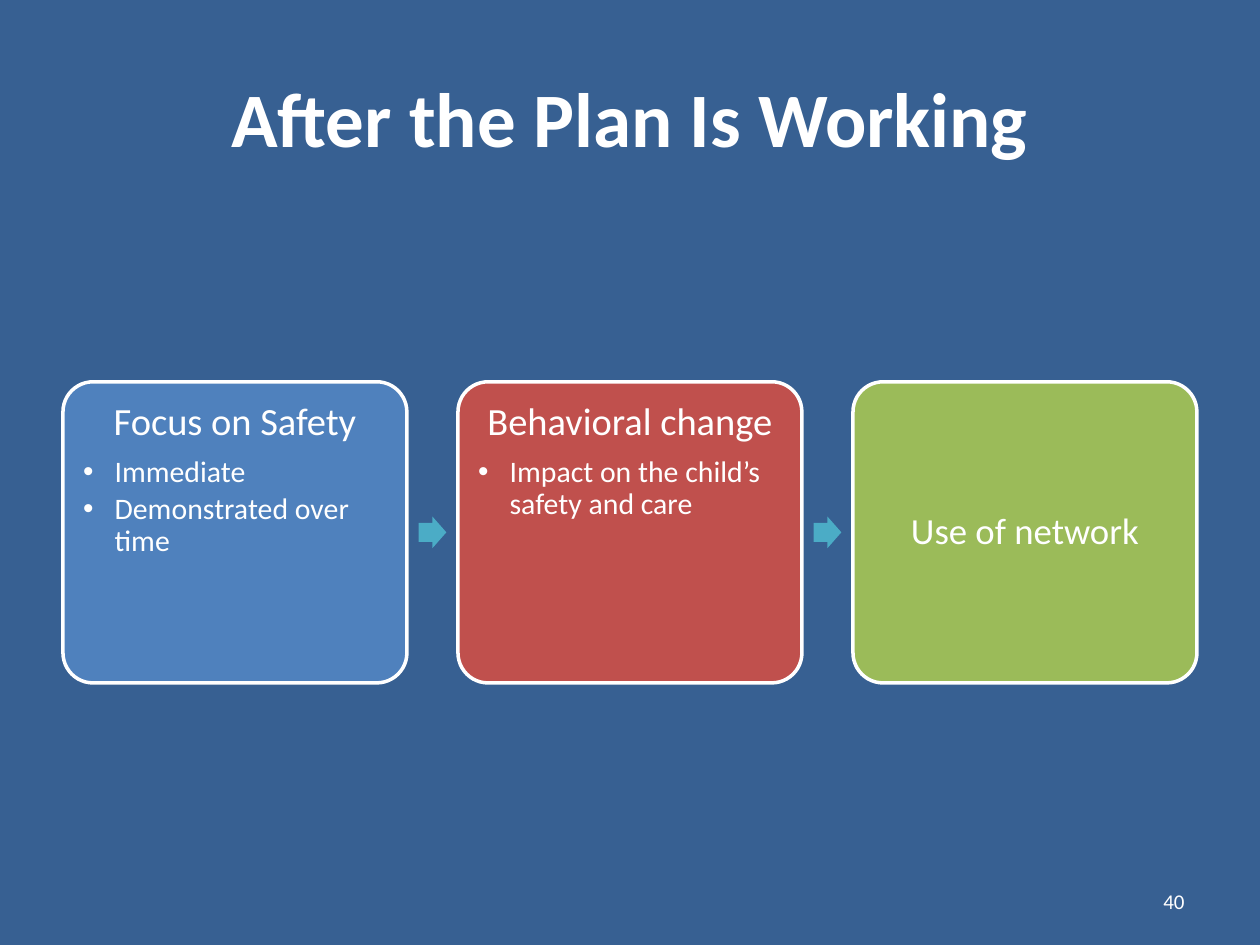
from lxml import etree
from pptx import Presentation, util as u
from pptx.dml.color import RGBColor
from pptx.enum import shapes, text
from pptx.oxml.ns import qn

NAVY = RGBColor(0x37, 0x60, 0x92)
WHITE = RGBColor(0xFF, 0xFF, 0xFF)
BLUE = RGBColor(0x4F, 0x81, 0xBD)
RED = RGBColor(0xC0, 0x50, 0x4D)
GREEN = RGBColor(0x9B, 0xBB, 0x59)
TEAL = RGBColor(0x4B, 0xAC, 0xC6)

WIDTH, HEIGHT = 10, 7.5
MARGIN = 0.5
CARD_WIDTH, CARD_HEIGHT = 2.73, 2.39
CARD_TOP = 3.03
ARROW_WIDTH, ARROW_HEIGHT = 0.22, 0.25

STEPS = [
    ("Focus on Safety", 22, ["Immediate", "Demonstrated over time"], BLUE),
    ("Behavioral change", 22, ["Impact on the child’s safety and care"], RED),
    ("Use of network", 21, [], GREEN),
]
PITCH = (WIDTH - 2 * MARGIN - CARD_WIDTH) / (len(STEPS) - 1)


class Deck:
    font = "Calibri"
    bullet_size = 17
    inset = 0.09

    def __init__(self):
        self.presentation = Presentation()
        self.presentation.slide_width = u.Inches(WIDTH)
        self.presentation.slide_height = u.Inches(HEIGHT)
        layout = self.presentation.slide_layouts[5]
        self.slide = self.presentation.slides.add_slide(layout)
        background = self.slide.background.fill
        background.solid()
        background.fore_color.rgb = NAVY

    def add_words(self, paragraph, words, size, align, bold=False):
        paragraph.alignment = align
        run = paragraph.add_run()
        run.text = words
        run.font.name = self.font
        run.font.size = u.Pt(size)
        run.font.bold = bold
        run.font.color.rgb = WHITE

    def title(self, words):
        heading = self.slide.shapes.title
        heading.left, heading.top = u.Inches(MARGIN), u.Inches(0.3)
        heading.width, heading.height = u.Inches(WIDTH - 2 * MARGIN), u.Inches(1.25)
        frame = heading.text_frame
        frame.vertical_anchor = text.MSO_ANCHOR.MIDDLE
        self.add_words(frame.paragraphs[0], words, 44, text.PP_ALIGN.CENTER, bold=True)

    def block(self, preset, box, color, adjustments):
        block = self.slide.shapes.add_shape(preset, *map(u.Inches, box))
        block.shadow.inherit = False
        for index, share in enumerate(adjustments):
            block.adjustments[index] = share
        block.fill.solid()
        block.fill.fore_color.rgb = color
        block.line.fill.background()
        return block

    def bullet(self, frame, words):
        item = frame.add_paragraph()
        item.level = 1
        item.line_spacing = 0.9
        item.space_after = u.Pt(0.15 * self.bullet_size)
        self.add_words(item, words, self.bullet_size, text.PP_ALIGN.LEFT)
        properties = item._p.get_or_add_pPr()
        properties.set("marL", str(u.Inches(0.25)))
        properties.set("indent", str(u.Inches(-0.25)))
        etree.SubElement(properties, qn("a:buFont")).set("typeface", "Arial")
        etree.SubElement(properties, qn("a:buChar")).set("char", "•")

    def card(self, column, heading, size, points, color):
        box = (MARGIN + column * PITCH, CARD_TOP, CARD_WIDTH, CARD_HEIGHT)
        card = self.block(shapes.MSO_SHAPE.ROUNDED_RECTANGLE, box, color, [0.1])
        card.line.color.rgb = WHITE
        card.line.width = u.Pt(2)
        frame = card.text_frame
        frame.word_wrap = True
        frame.margin_left = frame.margin_right = u.Inches(self.inset)
        frame.margin_top = frame.margin_bottom = u.Inches(self.inset)
        frame.vertical_anchor = text.MSO_ANCHOR.TOP if points else text.MSO_ANCHOR.MIDDLE
        lead = frame.paragraphs[0]
        lead.line_spacing = 0.9
        lead.space_after = u.Pt(0.35 * size)
        self.add_words(lead, heading, size, text.PP_ALIGN.CENTER)
        for point in points:
            self.bullet(frame, point)

    def arrow(self, column):
        gap_center = MARGIN + column * PITCH + (CARD_WIDTH + PITCH) / 2
        left = gap_center - ARROW_WIDTH / 2
        top = CARD_TOP + (CARD_HEIGHT - ARROW_HEIGHT) / 2
        box = (left, top, ARROW_WIDTH, ARROW_HEIGHT)
        self.block(shapes.MSO_SHAPE.RIGHT_ARROW, box, TEAL, [0.6, 0.5])

    def page_number(self, number):
        width = 2.33
        box = (WIDTH - MARGIN - width, 6.95, width, 0.4)
        frame = self.slide.shapes.add_textbox(*map(u.Inches, box)).text_frame
        frame.word_wrap = True
        frame.vertical_anchor = text.MSO_ANCHOR.MIDDLE
        self.add_words(frame.paragraphs[0], number, 12, text.PP_ALIGN.RIGHT)


def main():
    deck = Deck()
    deck.title("After the Plan Is Working")
    for column, step in enumerate(STEPS):
        deck.card(column, *step)
        if column < len(STEPS) - 1:
            deck.arrow(column)
    deck.page_number("40")
    deck.presentation.save("out.pptx")


if __name__ == "__main__":
    main()
